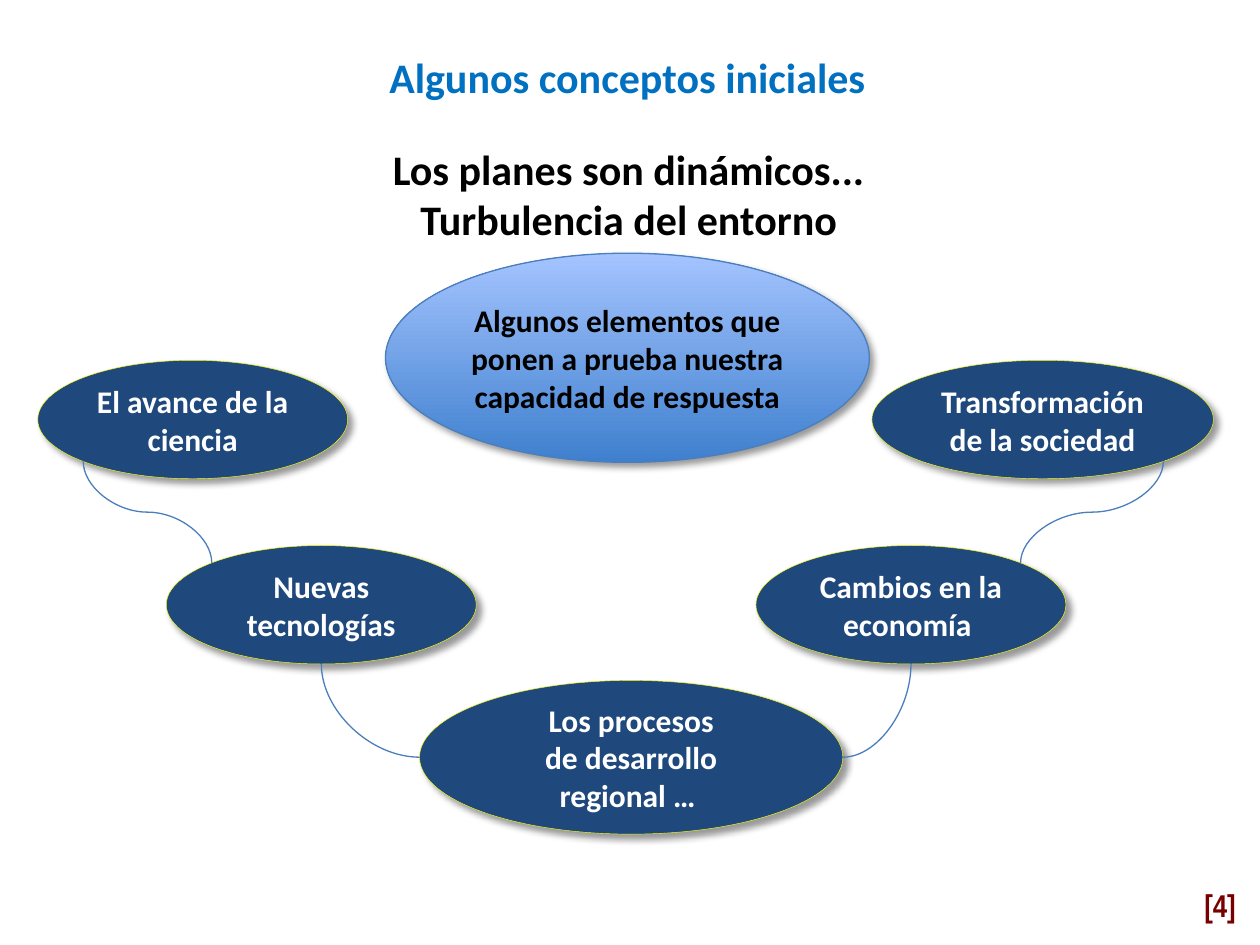
import dataclasses
import math

import lxml.etree
import pptx
import pptx.dml.color
import pptx.enum.shapes
import pptx.enum.text
import pptx.oxml.ns
import pptx.util

COLUMNS, ROWS = 100, 75
CELL = pptx.util.Inches(0.1)
qn = pptx.oxml.ns.qn


@dataclasses.dataclass(frozen=True)
class Theme:
    """Colours, fonts and sizes of the slide."""
    title: str = "0070C0"
    ink: str = "000000"
    light: str = "FFFFFF"
    number: str = "780000"
    navy: str = "1F497D"
    rim: str = "FFFF00"
    line: str = "4B7EBC"
    gradient: tuple = ("3F80CE", "A4C4FF")
    font: str = "Calibri"
    number_font: str = "Arial Narrow"
    heading_size: int = 24
    body_size: int = 18
    rim_width: float = 0.25
    line_width: float = 0.75


@dataclasses.dataclass(frozen=True)
class Box:
    """A rectangle in grid columns and rows."""
    left: float
    top: float
    width: float
    height: float

    def inner(self, left, top, width, height):
        """Return a box placed relative to this one."""
        return Box(self.left + left, self.top + top, width, height)

    def lengths(self):
        """Return left, top, width and height as slide lengths."""
        return [round(value * CELL) for value in dataclasses.astuple(self)]

    def rim_point(self, degrees):
        """Return the point of the inscribed ellipse, clockwise from the right."""
        angle = math.radians(degrees)
        return (self.left + self.width / 2 * (1 + math.cos(angle)),
                self.top + self.height / 2 * (1 + math.sin(angle)))


THEME = Theme()
CENTER = pptx.enum.text.PP_ALIGN.CENTER
MIDDLE = pptx.enum.text.MSO_ANCHOR.MIDDLE


def rgb(value):
    """Return a colour object for a hexadecimal value."""
    return pptx.dml.color.RGBColor.from_string(value)


def write_lines(shape, lines, color, size, font=THEME.font, align=CENTER):
    """Write bold paragraphs into a shape."""
    frame = shape.text_frame
    frame.word_wrap = True
    for index, line in enumerate(lines):
        paragraph = frame.add_paragraph() if index else frame.paragraphs[0]
        paragraph.alignment = align
        run = paragraph.add_run()
        run.text = line
        run.font.name = font
        run.font.size = pptx.util.Pt(size)
        run.font.bold = True
        run.font.color.rgb = rgb(color)


def add_shadow(shape, distance):
    """Give a shape a soft shadow to the lower right."""
    shape.shadow.inherit = False
    effects = shape.element.spPr.find(qn("a:effectLst"))
    shadow = lxml.etree.SubElement(
        effects, qn("a:outerShdw"), blurRad=str(pptx.util.Pt(4)),
        dist=str(pptx.util.Pt(distance)), dir="2700000", rotWithShape="0")
    color = lxml.etree.SubElement(shadow, qn("a:srgbClr"), val=THEME.ink)
    lxml.etree.SubElement(color, qn("a:alpha"), val="40000")


def add_ellipse(slide, box, lines, color, line, width, distance):
    """Add a captioned ellipse with a shadow and return it."""
    shape = slide.shapes.add_shape(
        pptx.enum.shapes.MSO_SHAPE.OVAL, *box.lengths())
    shape.line.color.rgb = rgb(line)
    shape.line.width = pptx.util.Pt(width)
    shape.text_frame.vertical_anchor = MIDDLE
    write_lines(shape, lines, color, THEME.body_size)
    shape.fill.solid()
    shape.fill.fore_color.rgb = rgb(THEME.navy)
    add_shadow(shape, distance)
    return shape


def add_descending_curve(slide, start, end, preset):
    """Add a curve that leaves its start downwards."""
    (start_x, start_y), (end_x, end_y) = start, end
    width, height = end_y - start_y, abs(end_x - start_x)
    left = (start_x + end_x - width) / 2
    top = (start_y + end_y - height) / 2
    left, top, width, height = Box(left, top, width, height).lengths()
    curve = slide.shapes.add_connector(
        pptx.enum.shapes.MSO_CONNECTOR.CURVE,
        left, top, left + width, top + height)
    properties = curve.element.spPr
    properties.find(qn("a:prstGeom")).set("prst", preset)
    transform = properties.find(qn("a:xfrm"))
    if end_x > start_x:
        transform.set("rot", "16200000")
        transform.set("flipH", "1")
    else:
        transform.set("rot", "5400000")
    curve.line.color.rgb = rgb(THEME.line)
    curve.line.width = pptx.util.Pt(THEME.line_width)
    lxml.etree.SubElement(properties, qn("a:effectLst"))


def add_headings(slide, box):
    """Add the title and the two-line subtitle."""
    headings = [
        (box.inner(0, 0, 79.8, 5), ["Algunos conceptos iniciales"], THEME.title),
        (box.inner(1.4, 7.3, 77.2, 9.1),
         ["Los planes son dinámicos...", "Turbulencia del entorno"], THEME.ink),
    ]
    for area, lines, color in headings:
        write_lines(slide.shapes.add_textbox(*area.lengths()), lines, color,
                    THEME.heading_size)


def add_diagram(slide, box):
    """Add the chain of ellipses around the central one."""
    science = box.inner(0, 8.5, 24.6, 9.4)
    technology = box.inner(10.2, 23.2, 24.6, 9.4)
    society = box.inner(66.2, 8.5, 27.1, 9.4)
    economy = box.inner(57, 23.2, 24.6, 9.4)
    region = box.inner(30.3, 33.9, 33.6, 12.2)
    for area, lines in [
        (science, ["El avance de la ciencia"]),
        (technology, ["Nuevas tecnologías"]),
        (society, ["Transformación de la sociedad"]),
        (economy, ["Cambios en la economía "]),
        (region, ["Los procesos", "de desarrollo regional … "]),
    ]:
        add_ellipse(slide, area, lines, THEME.light, THEME.rim,
                    THEME.rim_width, 4)
    for upper, leave, lower, arrive, preset in [
        (science, 135, technology, 225, "curvedConnector3"),
        (technology, 90, region, 180, "curvedConnector2"),
        (economy, 90, region, 0, "curvedConnector2"),
        (society, 45, economy, 315, "curvedConnector3"),
    ]:
        add_descending_curve(slide, upper.rim_point(leave),
                             lower.rim_point(arrive), preset)
    center = add_ellipse(
        slide, box.inner(27.6, 0, 38.4, 16.6),
        ["Algunos elementos que ponen a prueba nuestra capacidad de respuesta"],
        THEME.ink, THEME.line, THEME.line_width, 3)
    center.fill.gradient()
    center.fill.gradient_angle = 90
    for stop, color in zip(center.fill.gradient_stops, THEME.gradient):
        stop.color.rgb = rgb(color)


def add_page_number(slide, box):
    """Add the page number in the corner."""
    shape = slide.shapes.add_textbox(*box.lengths())
    shape.text_frame.vertical_anchor = MIDDLE
    write_lines(shape, ["[4]"], THEME.number, THEME.body_size,
                THEME.number_font, pptx.enum.text.PP_ALIGN.LEFT)


def main():
    """Build and save the slide."""
    presentation = pptx.Presentation()
    presentation.slide_width = COLUMNS * CELL
    presentation.slide_height = ROWS * CELL
    slide = presentation.slides.add_slide(presentation.slide_layouts[6])
    add_page_number(slide, Box(94.6, 69.3, 5.4, 5))
    add_headings(slide, Box(9.9, 3.6, 79.8, 16.4))
    add_diagram(slide, Box(3, 20.1, 93.3, 46.1))
    presentation.save("out.pptx")


if __name__ == "__main__":
    main()
